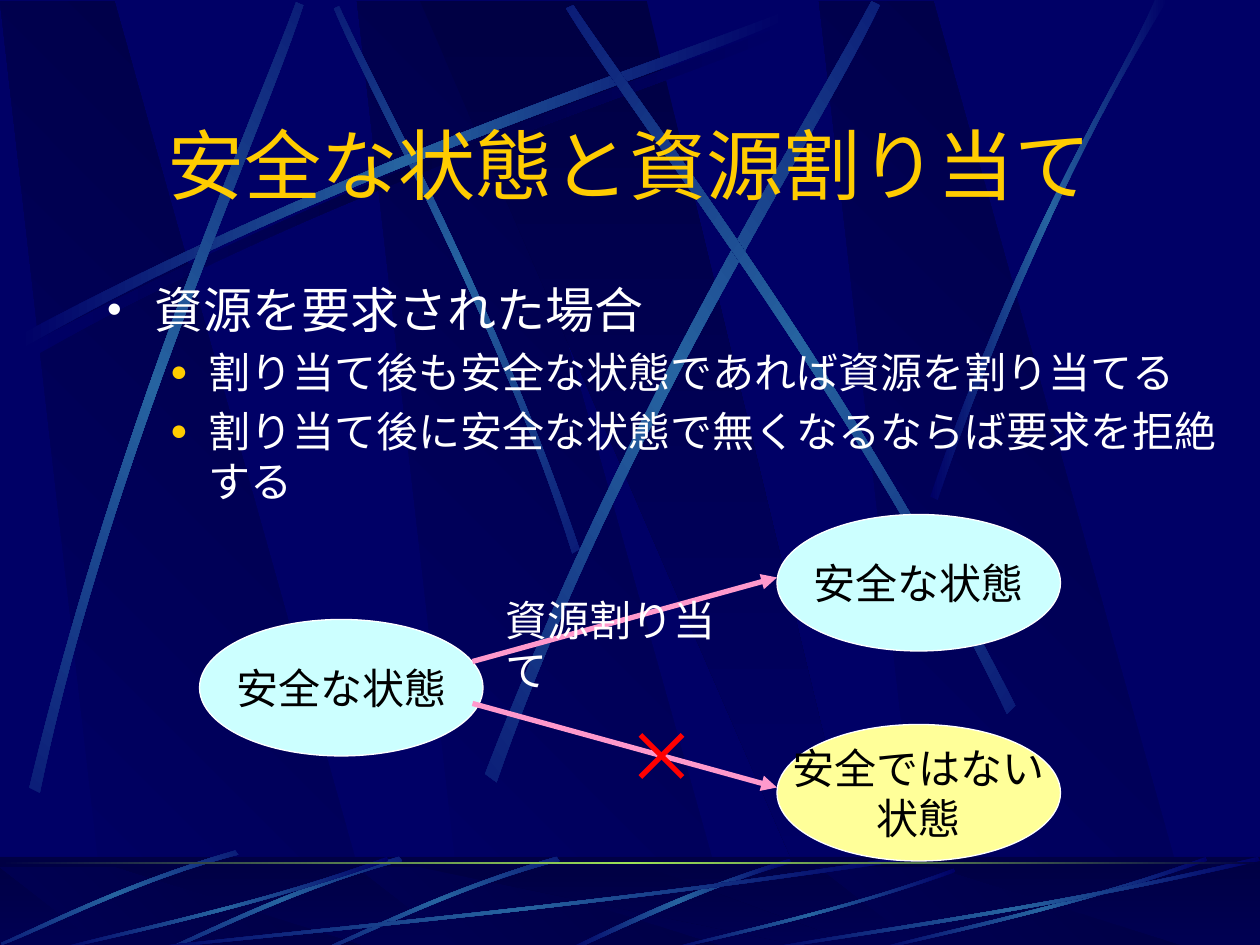
import copy
import math
from dataclasses import dataclass

from lxml import etree
from pptx import Presentation
from pptx import util as u
from pptx.dml.color import RGBColor
from pptx.enum import shapes, text
from pptx.oxml.ns import qn

PX = 7620  # EMU per px, 120 px to the inch


@dataclass(frozen=True)
class Theme:
    navy: str = "000066"
    dark: str = "000044"
    streak: str = "2663A0"
    glow: str = "9CE157"
    gold: str = "FFCC00"
    white: str = "FFFFFF"
    black: str = "000000"
    safe: str = "CCFFFF"
    unsafe: str = "FFFF99"
    arrow: str = "FF99CC"
    cross: str = "FF0000"
    title_font: str = "Montserrat"
    body_font: str = "Arial"
    label_font: str = "Times New Roman"
    title_size: int = 44
    body_size: int = 28
    label_size: int = 24


@dataclass(frozen=True)
class Streak:
    points: tuple  # two cubic curves of four points: out and back
    rotation: float = 0
    shift: tuple = (0, 0)
    middle: str = Theme.streak


@dataclass(frozen=True)
class State:
    left: int
    top: int
    color: str
    lines: tuple


@dataclass(frozen=True)
class Line:
    start: tuple
    end: tuple
    color: str
    arrow: bool = False


@dataclass(frozen=True)
class Bullet:
    words: str
    level: int
    size: int
    margin: int
    hang: int
    mark: str
    mark_color: str
    mark_percent: int
    before: float


THEME = Theme()
BEAM = ((24, 330), (341, 161), (629, 71), (751, 22), (755, 29), (634, 83), (305, 181), (28, 342))
SLIVER = ((530, 816), (426, 846), (344, 888), (307, 904),
          (308, 906), (346, 892), (438, 844), (533, 820))
RIBBON = ((860, 820), (539, 868), (247, 893), (124, 906),
          (120, 905), (242, 889), (576, 862), (857, 816))
UPPER_STREAKS = (
    Streak(BEAM, middle=THEME.dark),
    Streak(((552, 523), (469, 281), (362, 92), (323, 6),
            (318, 8), (354, 95), (478, 310), (545, 527)), 45),
    Streak(BEAM, shift=(-7, -10)),
    Streak(((28, 750), (112, 401), (236, 126), (282, 2),
            (289, 5), (248, 131), (103, 442), (38, 755)), 311.7),
    Streak(((462, 737), (598, 384), (766, 122), (830, 1),
            (838, 5), (779, 130), (583, 426), (473, 745)), 321.6),
    Streak(((967, 672), (804, 352), (619, 114), (546, 5),
            (539, 8), (608, 121), (822, 390), (959, 680)), 34.7),
    Streak(((886, 473), (977, 208), (1066, 80), (1100, 0),
            (1112, 0), (1003, 174), (923, 386), (893, 476))),
)
LOWER_STREAKS = (
    Streak(((752, 818), (644, 851), (572, 890), (538, 905),
            (544, 906), (588, 886), (685, 840), (754, 822))),
    *(Streak(SLIVER, 315, shift) for shift in ((0, 0), (-150, 0), (-306, -6))),
)
RIBBONS = ((120, 740, 816), (50, 320, 816), (632, 278, 827), (830, 320, 816), (720, 480, 816))
STATES = (
    State(190, 590, THEME.safe, ("安全な状態",)),
    State(740, 490, THEME.safe, ("安全な状態",)),
    State(740, 690, THEME.unsafe, ("安全ではない", "状態")),
)
BULLETS = (
    Bullet("資源を要求された場合", 0, THEME.body_size, 45, 45, "•", THEME.white, 85, 0),
    *(Bullet(words, 1, THEME.label_size, 97, 37, "●", THEME.gold, 70, 4.8)
      for words in ("割り当て後も安全な状態であれば資源を割り当てる",
                    "割り当て後に安全な状態で無くなるならば要求を拒絶する")),
)


def place(shape, left: int, top: int, width: int, height: int) -> None:
    shape.left, shape.top, shape.width, shape.height = (
        value * PX for value in (left, top, width, height))


def fill_gradient(shape, colors: tuple, angle: int = 0) -> None:
    """Spread the colours evenly; the angle runs counter-clockwise."""
    shape.shadow.inherit = False
    shape.line.fill.background()
    shape.fill.gradient()
    shape.fill.gradient_angle = angle
    stops = shape.element.find(".//" + qn("a:gsLst"))
    for _ in colors[2:]:
        stops.append(copy.deepcopy(stops[-1]))
    for index, (stop, color) in enumerate(zip(shape.fill.gradient_stops, colors)):
        stop.position = index / (len(colors) - 1)
        stop.color.rgb = RGBColor.from_string(color)


def add_outline(scene, points):
    scaled = [(round(x * PX), round(y * PX)) for x, y in points]
    builder = scene.shapes.build_freeform(*scaled[0], scale=1.0)
    builder.add_line_segments(scaled[1:], close=True)
    return builder.convert_to_shape()


def bend_sides(shape) -> None:
    """Turn both long sides of an eight-point outline into cubic curves."""
    segments = shape.element.findall(".//" + qn("a:lnTo"))
    for side in (segments[:3], segments[4:7]):
        curve = etree.Element(qn("a:cubicBezTo"))
        side[0].addprevious(curve)
        for segment in side:
            curve.append(segment[0])
            segment.getparent().remove(segment)


def add_streak(scene, streak: Streak) -> None:
    def turn(point: tuple, degrees: float) -> tuple:
        cosine, sine = math.cos(math.radians(degrees)), math.sin(math.radians(degrees))
        return point[0] * cosine - point[1] * sine, point[0] * sine + point[1] * cosine

    # Lay the streak level, so that its gradient turns with the shape
    level = [turn((x + streak.shift[0], y + streak.shift[1]), -streak.rotation)
             for x, y in streak.points]
    center = tuple((min(axis) + max(axis)) / 2 for axis in zip(*level))
    target = turn(center, streak.rotation)
    shape = add_outline(scene, [(x + target[0] - center[0], y + target[1] - center[1])
                                for x, y in level])
    bend_sides(shape)
    shape.rotation = streak.rotation
    fill_gradient(shape, (THEME.navy, streak.middle, THEME.navy))


def add_panels(scene, top: int, bottom: int) -> None:
    for left in (340, 0, 780):
        panel = add_outline(scene, [(left + 103, bottom), (left + 362, bottom),
                                    (left + 109, top), (left, top)])
        fill_gradient(panel, (THEME.navy, THEME.dark), 45)
    wedge = add_outline(scene, [(400, top), (790, bottom), (833, bottom), (616, top)])
    fill_gradient(wedge, (THEME.dark, THEME.navy), 270)


def add_band(scene, top: int, height: int):
    band = scene.shapes.add_shape(shapes.MSO_SHAPE.RECTANGLE, 0, top * PX, 1200 * PX, height * PX)
    band.shadow.inherit = False
    band.line.fill.background()
    return band


def add_span(para, words: str, font: str, size: int, color: str) -> None:
    span = para.add_run()
    span.text = words
    span.font.name, span.font.size = font, u.Pt(size)
    span.font.color.rgb = RGBColor.from_string(color)


def add_bullet(para, bullet: Bullet) -> None:
    para.level = bullet.level
    para.space_before = u.Pt(bullet.before)
    properties = para._p.get_or_add_pPr()
    properties.set("marL", str(bullet.margin * PX))
    properties.set("indent", str(-bullet.hang * PX))
    tint = etree.SubElement(properties, qn("a:buClr"))
    etree.SubElement(tint, qn("a:srgbClr"), val=bullet.mark_color)
    etree.SubElement(properties, qn("a:buSzPct"), val=str(bullet.mark_percent * 1000))
    etree.SubElement(properties, qn("a:buChar"), char=bullet.mark)
    add_span(para, bullet.words, THEME.body_font, bullet.size, THEME.white)


def add_state(page, state: State) -> None:
    oval = page.shapes.add_shape(shapes.MSO_SHAPE.OVAL, state.left * PX, state.top * PX,
                                 270 * PX, 130 * PX)
    oval.shadow.inherit = False
    oval.fill.solid()
    oval.fill.fore_color.rgb = RGBColor.from_string(state.color)
    oval.line.color.rgb = RGBColor.from_string(THEME.white)
    oval.line.width = u.Pt(0.75)
    frame = oval.text_frame
    frame.word_wrap = False
    frame.vertical_anchor = text.MSO_ANCHOR.MIDDLE
    for index, words in enumerate(state.lines):
        para = frame.add_paragraph() if index else frame.paragraphs[0]
        para.alignment = text.PP_ALIGN.CENTER
        add_span(para, words, THEME.label_font, THEME.label_size, THEME.black)


def add_line(page, line: Line) -> None:
    ends = (value * PX for value in (*line.start, *line.end))
    connector = page.shapes.add_connector(shapes.MSO_CONNECTOR.STRAIGHT, *ends)
    connector.line.color.rgb = RGBColor.from_string(line.color)
    connector.line.width = u.Pt(3)
    if line.arrow:
        stroke = connector.element.find(".//" + qn("a:ln"))
        etree.SubElement(stroke, qn("a:tailEnd"), type="triangle")
    etree.SubElement(connector.element.spPr, qn("a:effectLst"))


def draw_background(page, master) -> None:
    master.background.fill.solid()
    master.background.fill.fore_color.rgb = RGBColor.from_string(THEME.navy)
    scene = page.shapes.add_group_shape()
    add_panels(scene, 1, 902)
    for streak in UPPER_STREAKS:
        add_streak(scene, streak)
    # Floor, its veil and the glowing horizon
    fill_gradient(add_band(scene, 816, 90), (THEME.dark, THEME.navy), 270)
    add_panels(scene, 826, 906)
    veil = add_band(scene, 816, 90)
    veil.fill.solid()
    veil.fill.fore_color.rgb = RGBColor.from_string(THEME.dark)
    etree.SubElement(veil.element.find(".//" + qn("a:srgbClr")), qn("a:alpha"), val="50000")
    for streak in LOWER_STREAKS:
        add_streak(scene, streak)
    for left, width, top in RIBBONS:
        add_streak(scene, Streak(tuple((left + (x - 120) * width / 740,
                                        906 + (y - 906) * (906 - top) / 90) for x, y in RIBBON)))
    fill_gradient(add_band(scene, 821, 2), (THEME.dark, THEME.glow, THEME.dark))
    # The scene belongs to the master, behind its placeholders
    for number, properties in enumerate(scene.element.iter(qn("p:cNvPr")), start=100):
        properties.set("id", str(number))
    master.shapes.element.insert(2, scene.element)


def write_text(page) -> None:
    title, body = page.shapes.title, page.placeholders[1]
    for box in (title, body):
        box.text_frame.word_wrap = True
        box.text_frame.auto_size = text.MSO_AUTO_SIZE.NONE
    place(title, 90, 106, 1020, 100)
    title.text_frame.vertical_anchor = text.MSO_ANCHOR.MIDDLE
    para = title.text_frame.paragraphs[0]
    para.alignment = text.PP_ALIGN.CENTER
    add_span(para, "安全な状態と資源割り当て", THEME.title_font, THEME.title_size, THEME.gold)
    place(body, 90, 260, 1096, 260)
    for index, bullet in enumerate(BULLETS):
        frame = body.text_frame
        add_bullet(frame.add_paragraph() if index else frame.paragraphs[0], bullet)


def draw_diagram(page) -> None:
    add_state(page, STATES[0])
    add_line(page, Line((450, 630), (740, 550), THEME.arrow, True))
    label = page.shapes.add_textbox(470 * PX, 560 * PX, 250 * PX, 60 * PX)
    label.text_frame.word_wrap = True
    add_span(label.text_frame.paragraphs[0], "資源割り当て",
             THEME.label_font, THEME.label_size, THEME.white)
    add_line(page, Line((450, 670), (740, 750), THEME.arrow, True))
    for state in STATES[1:]:
        add_state(page, state)
    # Cross over the refused transition
    for start, end in ((650, 610), (610, 650)):
        add_line(page, Line((start, 700), (end, 740), THEME.cross))


def main() -> None:
    deck = Presentation()
    deck.slide_width, deck.slide_height = 1200 * PX, 900 * PX
    page = deck.slides.add_slide(deck.slide_layouts[1])
    draw_background(page, deck.slide_master)
    write_text(page)
    draw_diagram(page)
    deck.save("out.pptx")


if __name__ == "__main__":
    main()
